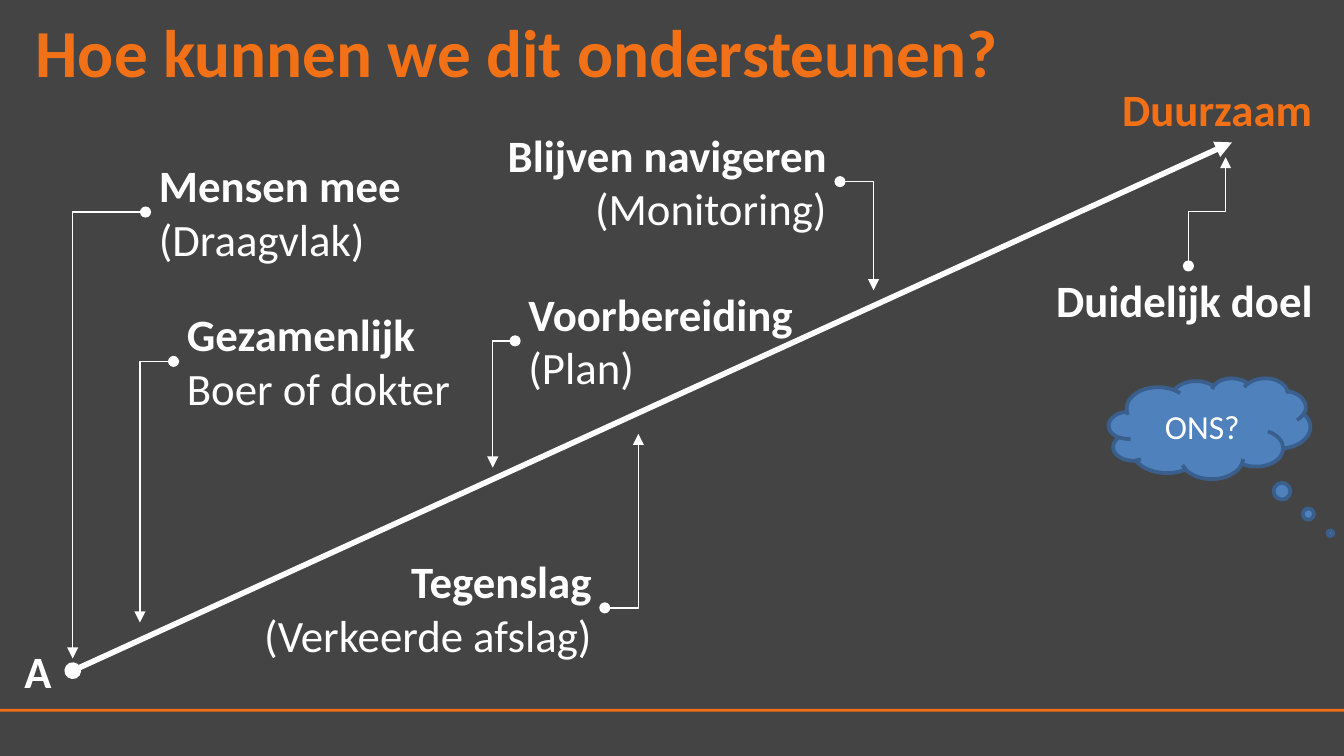
from dataclasses import dataclass

from lxml import etree
from pptx import Presentation
from pptx.dml.color import RGBColor
from pptx.enum.shapes import MSO_CONNECTOR, MSO_SHAPE
from pptx.enum.text import MSO_ANCHOR, MSO_AUTO_SIZE, PP_ALIGN
from pptx.oxml.ns import qn
from pptx.util import Pt

LEFT, CENTER, RIGHT = PP_ALIGN.LEFT, PP_ALIGN.CENTER, PP_ALIGN.RIGHT
MIDDLE, TOP_ANCHOR = MSO_ANCHOR.MIDDLE, MSO_ANCHOR.TOP
FIT = MSO_AUTO_SIZE.SHAPE_TO_FIT_TEXT
STRAIGHT, ELBOW = MSO_CONNECTOR.STRAIGHT, MSO_CONNECTOR.ELBOW
RECTANGLE, CLOUD = MSO_SHAPE.RECTANGLE, MSO_SHAPE.CLOUD_CALLOUT
TOP_SIDE, LEFT_SIDE, RIGHT_SIDE = 0, 1, 3
FONT = "Calibri"
COLORS = {
    "background": "444444",
    "accent": "F37116",
    "white": "FFFFFF",
    "cloud": "4F81BD",
    "cloud_line": "3A5F8C",
}


@dataclass
class Label:
    """A bold heading, with an optional plain line below it."""
    heading: str
    left: float
    top: float
    width: float
    height: float = 36
    detail: str = ""
    color: str = "white"
    size: float = 24
    align: PP_ALIGN = LEFT
    anchor: MSO_ANCHOR = TOP_ANCHOR


@dataclass
class Callout:
    """A label whose arrow runs from the middle of one side to a tip."""
    label: Label
    side: int
    tip: tuple[float, float]


TITLE = Label("Hoe kunnen we dit ondersteunen?", 12, -7, 696, 68,
              color="accent", size=36, anchor=MIDDLE)
START = Label("A", 6, 341.3, 33)
GOAL = Label("Duurzaam", 594, 40.3, 126, color="accent")
GOAL_POINT = (660, 76.3)
CALLOUTS = [
    Callout(Label("Duidelijk doel", 558.7, 142.5, 156), TOP_SIDE, (656.6, 84.2)),
    Callout(Label("Voorbereiding", 276, 149.9, 168, 65.4, "(Plan)"),
            LEFT_SIDE, (264, 250.5)),
    Callout(Label("Tegenslag", 132, 293, 192, 65.4, "(Verkeerde afslag)", align=RIGHT),
            RIGHT_SIDE, (342, 232.5)),
    Callout(Label("Blijven navigeren", 258, 64.6, 192, 65.4, "(Monitoring)", align=RIGHT),
            RIGHT_SIDE, (468, 155.5)),
    Callout(Label("Mensen mee", 78, 80.9, 156, 65.4, "(Draagvlak)"),
            LEFT_SIDE, (39, 352.8)),
    Callout(Label("Gezamenlijk", 93, 160.9, 156, 65.4, "Boer of dokter"),
            LEFT_SIDE, (75, 333.5)),
]


def rgb(name: str) -> RGBColor:
    return RGBColor.from_string(COLORS[name])


def write_line(p, text: str, color: str, size: float, bold: bool, align) -> None:
    p.alignment = align
    r = p.add_run()
    r.text = text
    for name, value in {"name": FONT, "size": Pt(size), "bold": bold}.items():
        setattr(r.font, name, value)
    r.font.color.rgb = rgb(color)


def add_label(s, label: Label):
    sp = s.shapes.add_textbox(Pt(label.left), Pt(label.top),
                              Pt(label.width), Pt(label.height))
    tf = sp.text_frame
    settings = {"word_wrap": True, "vertical_anchor": label.anchor}
    if label.anchor == TOP_ANCHOR:
        settings["auto_size"] = FIT
    for name, value in settings.items():
        setattr(tf, name, value)
    write_line(tf.paragraphs[0], label.heading, label.color, label.size, True, label.align)
    if label.detail:
        write_line(tf.add_paragraph(), label.detail, label.color, label.size,
                   False, label.align)
    return sp


def add_line(s, kind, begin, end, width: float, head: str, tail: str):
    """Draw a white connector; head is the mark at begin, tail the one at end."""
    line = s.shapes.add_connector(kind, Pt(begin[0]), Pt(begin[1]), Pt(end[0]), Pt(end[1]))
    line.line.color.rgb = rgb("white")
    line.line.width = Pt(width)
    ln = line.line._get_or_add_ln()
    for tag, mark in (("a:headEnd", head), ("a:tailEnd", tail)):
        etree.SubElement(ln, qn(tag), type=mark)
    etree.SubElement(line._element.spPr, qn("a:effectLst"))
    return line


def add_callout(s, callout: Callout) -> None:
    label, tip = callout.label, callout.tip
    box = add_label(s, label)
    if callout.side == TOP_SIDE:
        add_upright_elbow(s, (label.left + label.width / 2, label.top), tip)
        return
    x = label.left + (label.width if callout.side == RIGHT_SIDE else 0)
    line = add_line(s, ELBOW, (x, label.top + label.height / 2), tip, 0.75,
                    "oval", "triangle")
    line._element.spPr.find(qn("a:prstGeom")).set("prst", "bentConnector2")
    line.begin_connect(box, callout.side)


def add_upright_elbow(s, begin, end) -> None:
    """Draw an elbow that leaves and arrives vertically, by a quarter turn."""
    cx, cy = (begin[0] + end[0]) / 2, (begin[1] + end[1]) / 2
    dx, dy = begin[0] - cx, begin[1] - cy
    line = add_line(s, ELBOW, (cx + dy, cy - dx), (cx - dy, cy + dx), 0.75,
                    "oval", "triangle")
    line._element.spPr.find(qn("a:xfrm")).set("rot", "5400000")


def add_filled_shape(s, kind, left: float, top: float, width: float, height: float,
                     color: str):
    sp = s.shapes.add_shape(kind, Pt(left), Pt(top), Pt(width), Pt(height))
    sp.shadow.inherit = False
    sp.fill.solid()
    sp.fill.fore_color.rgb = rgb(color)
    sp.line.fill.background()
    return sp


def add_cloud(s) -> None:
    sp = add_filled_shape(s, CLOUD, 594, 202.5, 108, 54, "cloud")
    sp.adjustments[0], sp.adjustments[1] = 0.6, 1.04
    sp.line.color.rgb = rgb("cloud_line")
    sp.line.width = Pt(2)
    tf = sp.text_frame
    tf.vertical_anchor = MIDDLE
    write_line(tf.paragraphs[0], "ONS?", "white", 18, False, CENTER)


def main() -> None:
    prs = Presentation()
    prs.slide_width, prs.slide_height = Pt(720), Pt(405)
    s = prs.slides.add_slide(prs.slide_layouts[6])
    s.background.fill.solid()
    s.background.fill.fore_color.rgb = rgb("background")

    add_filled_shape(s, RECTANGLE, 0, 379.8, 720, 1.5, "accent")
    add_label(s, TITLE)
    start = add_label(s, START)
    start_point = (START.left + START.width, START.top + START.height / 2)
    route = add_line(s, STRAIGHT, GOAL_POINT, start_point, 3, "triangle", "oval")
    route.end_connect(start, RIGHT_SIDE)
    add_label(s, GOAL)
    for callout in CALLOUTS:
        add_callout(s, callout)
    add_cloud(s)
    prs.save("out.pptx")


if __name__ == "__main__":
    main()
